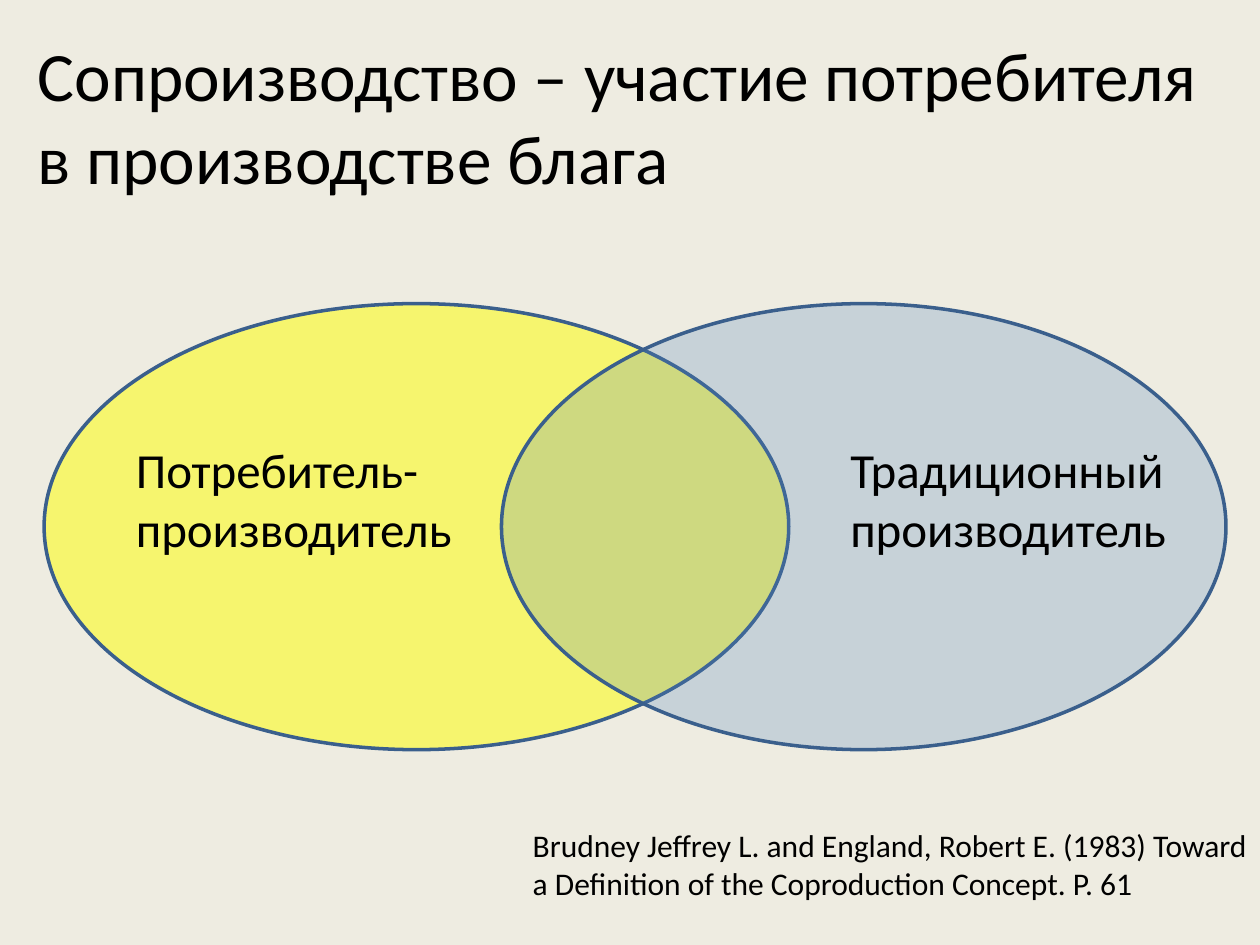
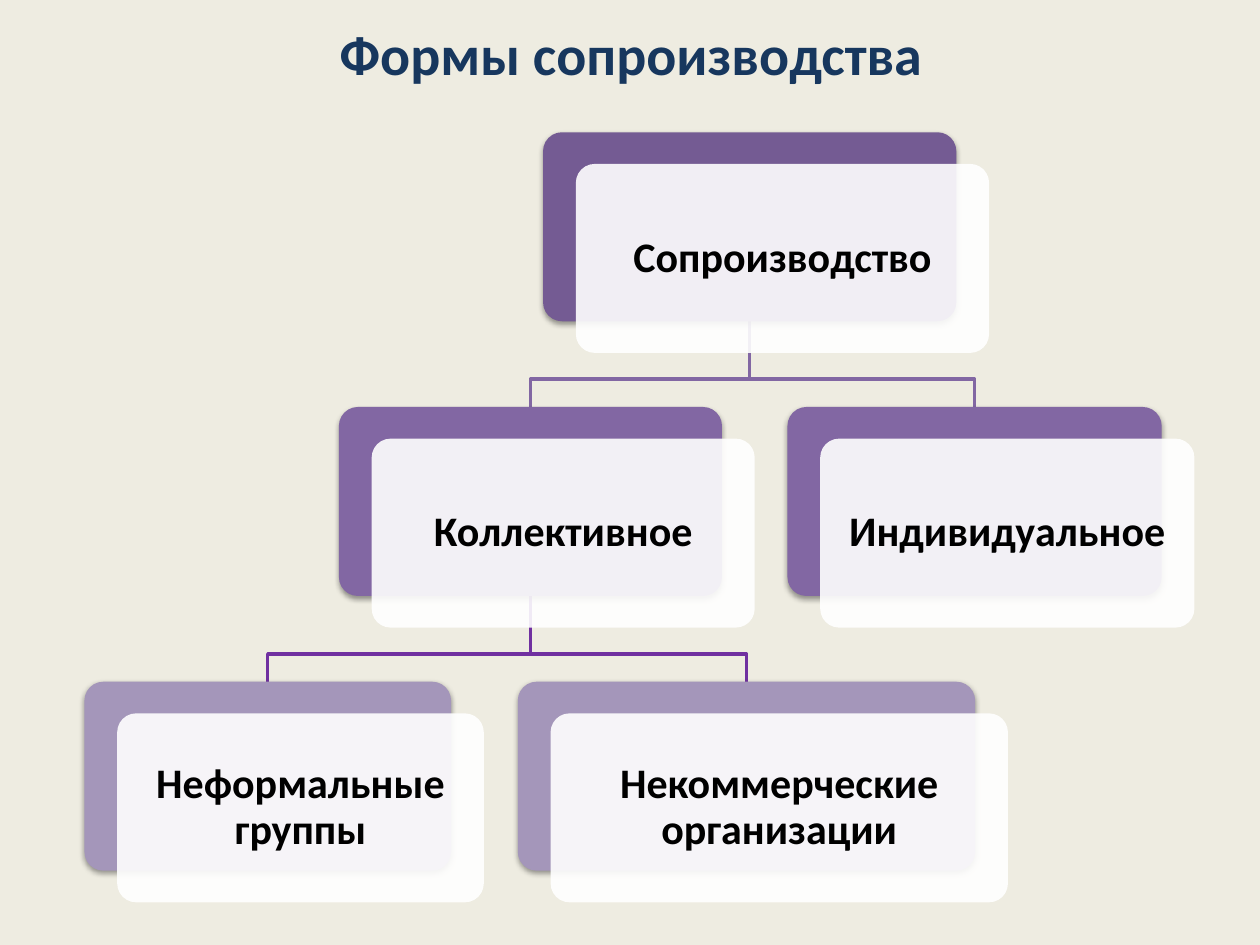
from dataclasses import dataclass

import pptx
import pptx.dml.color
import pptx.enum.shapes
import pptx.enum.text
import pptx.oxml
import pptx.oxml.ns
import pptx.util
from pptx.enum.shapes import MSO_SHAPE
from pptx.enum.text import MSO_ANCHOR, PP_ALIGN

WIDTH, HEIGHT = pptx.util.Inches(10), pptx.util.Inches(7.5)


@dataclass(frozen=True)
class Theme:
    font: str = "Calibri"
    paper: str = "EEECE1"
    ink: str = "000000"
    heading: str = "17375E"
    white: str = "FFFFFF"
    consumer: str = "FFFF00"
    producer: str = "4F81BD"
    outline: str = "3A5F8C"
    levels: tuple = ("745B93", "8267A3", "A496BA")
    branches: tuple = ("8267A3", "7030A0")
    statement_size: float = 39.6
    heading_size: float = 32
    label_size: float = 28
    card_size: float = 24
    source_size: float = 18
    line_width: float = 2


THEME = Theme()

# Organisation chart, in percent of the slide's width (x) or height (y)
LEVEL_TOP, LEVEL_STEP, CARD_HEIGHT = 14, 29.07, 20
FRONT_SHIFT = (2.6, 3.35)
BEND_ABOVE_CHILD = 2.93


@dataclass(frozen=True)
class Card:
    label: str
    level: int
    left: float
    width: float
    children: tuple = ()

    @property
    def top(self):
        return LEVEL_TOP + self.level * LEVEL_STEP

    @property
    def center(self):
        return self.left + self.width / 2

    def tree(self):
        yield self
        for child in self.children:
            yield from child.tree()


FORMS = Card("Сопроизводство", 0, 43.1, 32.8, (
    Card("Коллективное", 1, 26.9, 30.4, (
        Card("Неформальные группы", 2, 6.7, 29.1),
        Card("Некоммерческие организации", 2, 41.1, 36.3))),
    Card("Индивидуальное", 1, 62.5, 29.7)))


def color(code):
    return pptx.dml.color.RGBColor.from_string(code)


def across(share):
    return round(WIDTH * share / 100)


def down(share):
    return round(HEIGHT * share / 100)


def place(left, top, width, height):
    return across(left), down(top), across(width), down(height)


def apply(target, formats):
    for name, value in formats.items():
        setattr(target, name, value)


def draw_line(line, code):
    line.color.rgb = color(code)
    line.width = pptx.util.Pt(THEME.line_width)


def add_text(slide, area, words, size, code=THEME.ink, bold=False,
             frame_formats=None, paragraph_formats=None):
    frame = slide.shapes.add_textbox(*place(*area)).text_frame
    apply(frame, {"word_wrap": True, **(frame_formats or {})})
    paragraph = frame.paragraphs[0]
    apply(paragraph, paragraph_formats or {})
    run = paragraph.add_run()
    run.text = words
    apply(run.font, {"name": THEME.font, "size": pptx.util.Pt(size), "bold": bold})
    run.font.color.rgb = color(code)


def add_filled(slide, preset, area, code, opacity=100, outline=None):
    shape = slide.shapes.add_shape(preset, *place(*area))
    shape.shadow.inherit = False
    shape.fill.solid()
    shape.fill.fore_color.rgb = color(code)
    if opacity < 100:
        tone = shape.element.spPr.find(".//" + pptx.oxml.ns.qn("a:srgbClr"))
        alpha = pptx.oxml.parse_xml(
            f'<a:alpha {pptx.oxml.ns.nsdecls("a")} val="{opacity * 1000}"/>')
        tone.append(alpha)
    if outline:
        draw_line(shape.line, outline)
    else:
        shape.line.fill.background()
    return shape


def cast_shadow(shape):
    effects = shape.element.spPr.find(pptx.oxml.ns.qn("a:effectLst"))
    effects.append(pptx.oxml.parse_xml(
        f'<a:outerShdw {pptx.oxml.ns.nsdecls("a")} blurRad="40000" dist="20000"'
        ' dir="5400000" rotWithShape="0"><a:srgbClr val="000000">'
        '<a:alpha val="38000"/></a:srgbClr></a:outerShdw>'))


def add_branch(slide, parent, child):
    """Draw the elbow from a card's bottom to the top of one of its children."""
    bend = child.top - BEND_ABOVE_CHILD
    corners = [(parent.center, parent.top + CARD_HEIGHT), (parent.center, bend),
               (child.center, bend), (child.center, child.top)]
    start, *rest = [(across(x), down(y)) for x, y in corners]
    builder = slide.shapes.build_freeform(*start)
    builder.add_line_segments(rest, close=False)
    branch = builder.convert_to_shape()
    branch.shadow.inherit = False
    branch.fill.background()
    draw_line(branch.line, THEME.branches[parent.level])


def add_card(slide, card):
    """Draw a coloured back plate, a pale front plate and the label."""
    back = (card.left, card.top, card.width, CARD_HEIGHT)
    front = (card.left + FRONT_SHIFT[0], card.top + FRONT_SHIFT[1],
             card.width, CARD_HEIGHT)
    plate = add_filled(slide, MSO_SHAPE.ROUNDED_RECTANGLE, back,
                       THEME.levels[card.level])
    cast_shadow(plate)
    cover = add_filled(slide, MSO_SHAPE.ROUNDED_RECTANGLE, front, THEME.white, 90)
    for rounded in (plate, cover):
        rounded.adjustments[0] = 0.1
    margins = {f"margin_{side}": pptx.util.Inches(0.1)
               for side in ("left", "top", "right", "bottom")}
    add_text(slide, front, card.label, THEME.card_size, bold=True,
             frame_formats={"vertical_anchor": MSO_ANCHOR.MIDDLE, **margins},
             paragraph_formats={"alignment": PP_ALIGN.CENTER, "line_spacing": 0.9})


def add_title(slide, area, words, size, **formats):
    add_text(slide, area, words, size,
             frame_formats={"vertical_anchor": MSO_ANCHOR.MIDDLE}, **formats)


def build_definition(slide):
    add_title(slide, (2, 3.87, 96.1, 16.67),
              "Сопроизводство – участие потребителя в производстве блага",
              THEME.statement_size)
    for left, width, code, opacity in ((3.5, 59.1, THEME.consumer, 51),
                                       (39.8, 57.5, THEME.producer, 24)):
        add_filled(slide, MSO_SHAPE.OVAL, (left, 32.13, width, 47.2),
                   code, opacity, THEME.outline)
    add_text(slide, (41.3, 65.1 / 0.75, 58.7, 9.47),
             "Brudney Jeffrey L. and England, Robert E. (1983) "
             "Toward a Definition of the Coproduction Concept. P. 61",
             THEME.source_size)
    for left, width, role in ((9.8, 32, "Потребитель-производитель"),
                              (66.5, 27.6, "Традиционный производитель")):
        add_text(slide, (left, 45.87, width, 13.87), role, THEME.label_size)


def build_forms(slide):
    add_title(slide, (5.1, 0, 90, 11.33), "Формы сопроизводства",
              THEME.heading_size, code=THEME.heading, bold=True,
              paragraph_formats={"alignment": PP_ALIGN.CENTER})
    cards = list(FORMS.tree())
    for parent in cards:
        for child in parent.children:
            add_branch(slide, parent, child)
    for card in cards:
        add_card(slide, card)


def main():
    deck = pptx.Presentation()
    apply(deck, {"slide_width": WIDTH, "slide_height": HEIGHT})
    paper = deck.slide_master.background.fill
    paper.solid()
    paper.fore_color.rgb = color(THEME.paper)
    blank = deck.slide_layouts[6]
    for build in (build_definition, build_forms):
        build(deck.slides.add_slide(blank))
    deck.save("out.pptx")


if __name__ == "__main__":
    main()
